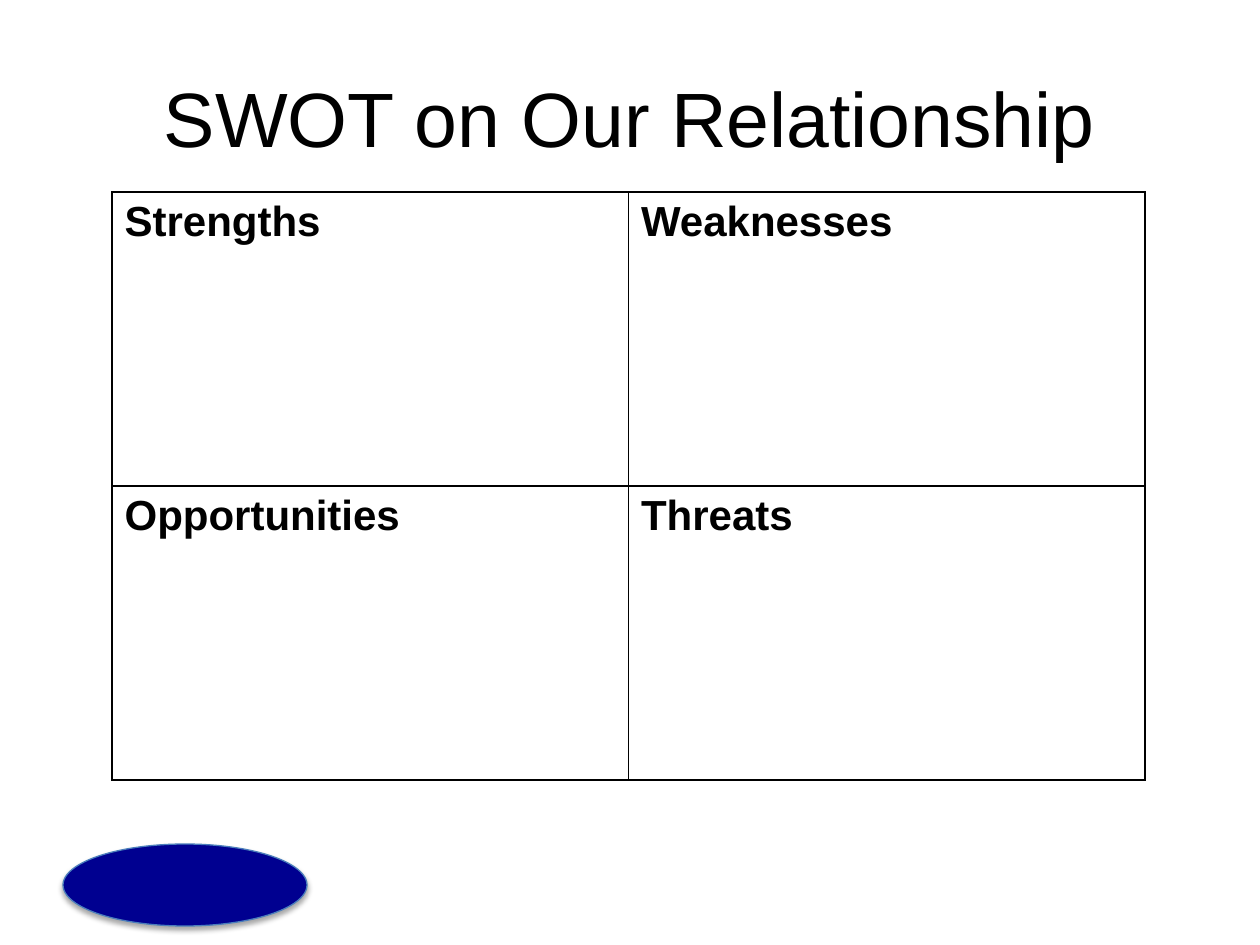
from lxml import etree
from pptx import Presentation
from pptx import util as u
from pptx.dml.color import RGBColor
from pptx.enum import shapes, text
from pptx.oxml import ns

PX = 914400 / 126
FONT = "Arial"
BLACK = RGBColor(0x00, 0x00, 0x00)
NAVY = RGBColor(0x00, 0x00, 0x90)
STEEL = RGBColor(0x4B, 0x7E, 0xBC)
QUADRANTS = [["Strengths", "Weaknesses"], ["Opportunities", "Threats"]]


def px(*values):
    return [u.Emu(round(v * PX)) for v in values]


def add_child(parent, tag, **attrs):
    return etree.SubElement(parent, ns.qn(tag), {k: str(v) for k, v in attrs.items()})


def add_color(parent, color):
    return add_child(add_child(parent, "a:solidFill"), "a:srgbClr", val=color)


def format_text(tf, size, bold=False):
    for p in tf.paragraphs:
        for r in p.runs:
            r.font.name = FONT
            r.font.size = u.Pt(size)
            r.font.bold = bold
            r.font.color.rgb = BLACK


def add_badge(s, x, y, w, h):
    sp = s.shapes.add_shape(shapes.MSO_SHAPE.OVAL, *px(x, y, w, h))
    sp.fill.solid()
    sp.fill.fore_color.rgb = NAVY
    sp.line.color.rgb = STEEL
    sp.line.width = u.Pt(0.75)
    sp.shadow.inherit = False
    effects = sp._element.spPr.find(ns.qn("a:effectLst"))
    shadow = add_child(effects, "a:outerShdw", blurRad=u.Pt(3.1), dist=u.Pt(1.8),
                       dir=90 * 60000, rotWithShape=0)
    color = add_child(shadow, "a:srgbClr", val=BLACK)
    add_child(color, "a:alpha", val=35000)


def add_title(s, x, y, w, h):
    tf = s.shapes.add_textbox(*px(x, y, w, h)).text_frame
    tf.word_wrap = True
    tf.vertical_anchor = text.MSO_ANCHOR.MIDDLE
    tf.text = "SWOT on Our Relationship"
    tf.paragraphs[0].alignment = text.PP_ALIGN.CENTER
    format_text(tf, 44)


def add_borders(cell):
    tcPr = cell._tc.get_or_add_tcPr()
    for side in "LRTB":
        add_color(add_child(tcPr, f"a:ln{side}", w=u.Pt(1)), BLACK)


def add_swot_table(s, x, y, w, h):
    table = s.shapes.add_table(2, 2, *px(x, y, w, h)).table
    table.first_row = table.horz_banding = False
    for row, labels in zip(table.rows, QUADRANTS):
        for cell, label in zip(row.cells, labels):
            add_borders(cell)
            cell.fill.background()
            cell.text = label
            format_text(cell.text_frame, 24, bold=True)


def main():
    prs = Presentation()
    prs.slide_width, prs.slide_height = px(1260, 945)
    s = prs.slides.add_slide(prs.slide_layouts[6])
    add_badge(s, 63, 844, 244, 82)
    add_title(s, 63, 38, 1134, 157)
    add_swot_table(s, 112, 192, 1033, 588)
    prs.save("out.pptx")


if __name__ == "__main__":
    main()
